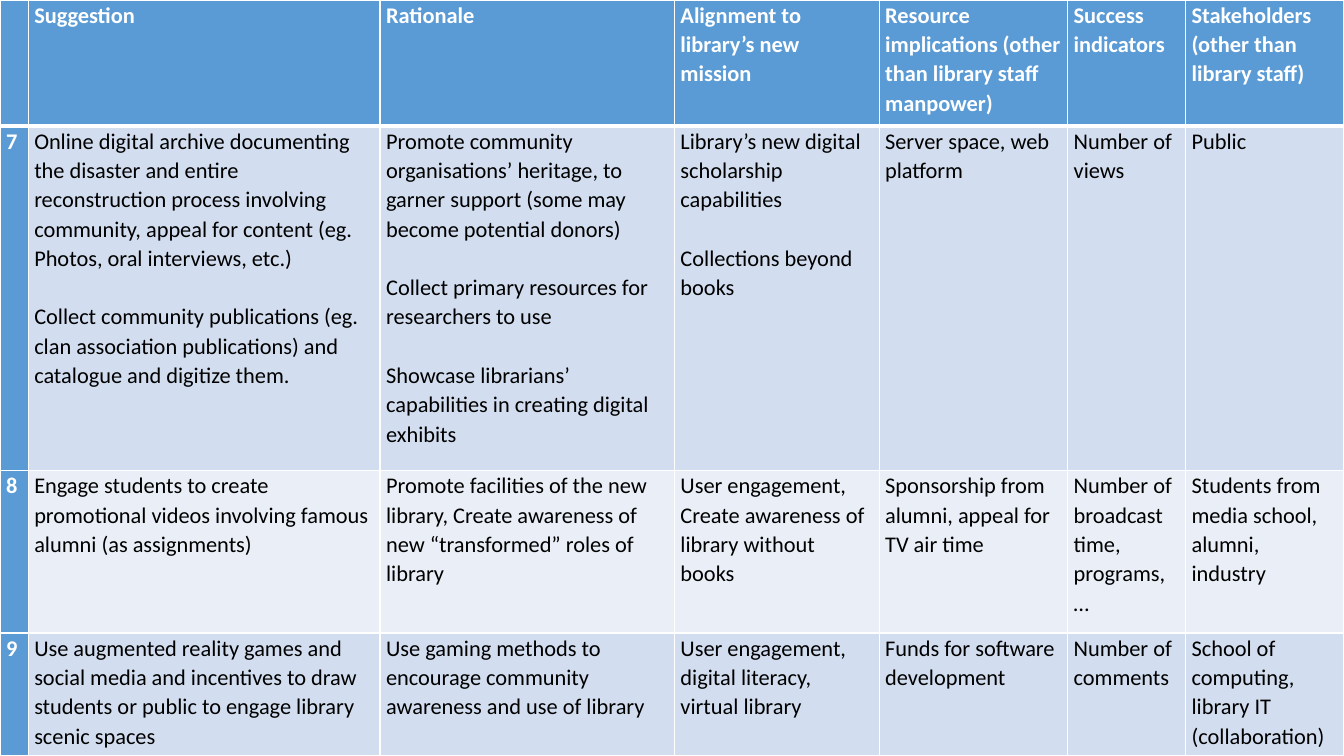
from lxml.etree import SubElement
from pptx import Presentation
from pptx.dml.color import RGBColor
from pptx.oxml.ns import qn
from pptx.util import Inches, Pt

COLORS = {"head": "5B9BD5", "band": "D2DEEF", "plain": "EAEFF7",
          "white": "FFFFFF", "text": "000000"}
COLUMNS = [0.28, 3.49, 2.92, 2.03, 1.87, 1.17, 1.57]
ROWS = [1.25, 3.42, 1.61, 1.22]
SUGGESTIONS = [
    ["", "Suggestion", "Rationale", "Alignment to library’s new mission",
     "Resource implications (other than library staff manpower)",
     "Success indicators", "Stakeholders (other than library staff)"],
    ["7",
     "Online digital archive documenting the disaster and entire reconstruction process "
     "involving community, appeal for content (eg. Photos, oral interviews, etc.)\n"
     "Collect community publications (eg. clan association publications) and catalogue "
     "and digitize them.",
     "Promote community organisations’ heritage, to garner support (some may become "
     "potential donors)\n"
     "Collect primary resources for researchers to use\n"
     "Showcase librarians’ capabilities in creating digital exhibits",
     "Library’s new digital scholarship capabilities\nCollections beyond books",
     "Server space, web platform", "Number of views", "Public"],
    ["8",
     "Engage students to create promotional videos involving famous alumni (as assignments)",
     "Promote facilities of the new library, Create awareness of new “transformed” roles "
     "of library",
     "User engagement, Create awareness of library without books",
     "Sponsorship from alumni, appeal for TV air time",
     "Number of broadcast time, programs, …",
     "Students from media school, alumni, industry"],
    ["9",
     "Use augmented reality games and social media and incentives to draw students or "
     "public to engage library scenic spaces",
     "Use gaming methods to encourage community awareness and use of library",
     "User engagement, digital literacy, virtual library",
     "Funds for software development", "Number of comments",
     "School of computing, library IT (collaboration)"],
]


class TableSlide:
    font = {"name": "Calibri", "size": Pt(16)}
    cell_format = {"margin_left": Inches(0.06), "margin_right": Inches(0.06),
                   "margin_top": 0, "margin_bottom": 0}
    line_spacing = 1.07
    paragraph_gap = Pt(20.9)

    def __init__(self, prs):
        self.width, self.height = prs.slide_width, prs.slide_height
        self.s = prs.slides.add_slide(prs.slide_layouts[6])

    def apply(self, target, values):
        for name, value in values.items():
            setattr(target, name, value)

    def table(self, columns, rows, content):
        frame = self.s.shapes.add_table(len(rows), len(columns), 0, 0, self.width, self.height)
        tbl = frame.table
        self.apply(tbl, {"first_row": False, "horz_banding": False})
        for column, share in zip(tbl.columns, columns):
            column.width = int(self.width * share / sum(columns))
        for row, share in zip(tbl.rows, rows):
            row.height = int(self.height * share / sum(rows))
        for i, texts in enumerate(content):
            for j, text in enumerate(texts):
                self.cell(tbl.cell(i, j), text, i, j)

    def cell(self, cell, text, i, j):
        heading = i == 0 or j == 0
        self.apply(cell, self.cell_format)
        self.borders(cell, {"L": 1, "R": 1, "T": 3 if i == 1 else 1, "B": 3 if i == 0 else 1})
        fill = "head" if heading else "band" if i % 2 else "plain"
        cell.fill.solid()
        cell.fill.fore_color.rgb = RGBColor.from_string(COLORS[fill])
        cell.text = text
        for k, p in enumerate(cell.text_frame.paragraphs):
            self.apply(p, {"line_spacing": self.line_spacing,
                           "space_before": self.paragraph_gap if k else Pt(0)})
            for r in p.runs:
                self.apply(r.font, {**self.font, "bold": heading})
                color = COLORS["white" if heading else "text"]
                r.font.color.rgb = RGBColor.from_string(color)

    def borders(self, cell, widths):
        tcPr = cell._tc.get_or_add_tcPr()
        for side, width in widths.items():
            ln = SubElement(tcPr, qn(f"a:ln{side}"), w=str(Pt(width)))
            fill = SubElement(ln, qn("a:solidFill"))
            SubElement(fill, qn("a:srgbClr"), val=COLORS["white"])


def main():
    prs = Presentation()
    prs.slide_width, prs.slide_height = Inches(13.33), Inches(7.5)
    TableSlide(prs).table(COLUMNS, ROWS, SUGGESTIONS)
    prs.save("out.pptx")


if __name__ == "__main__":
    main()
